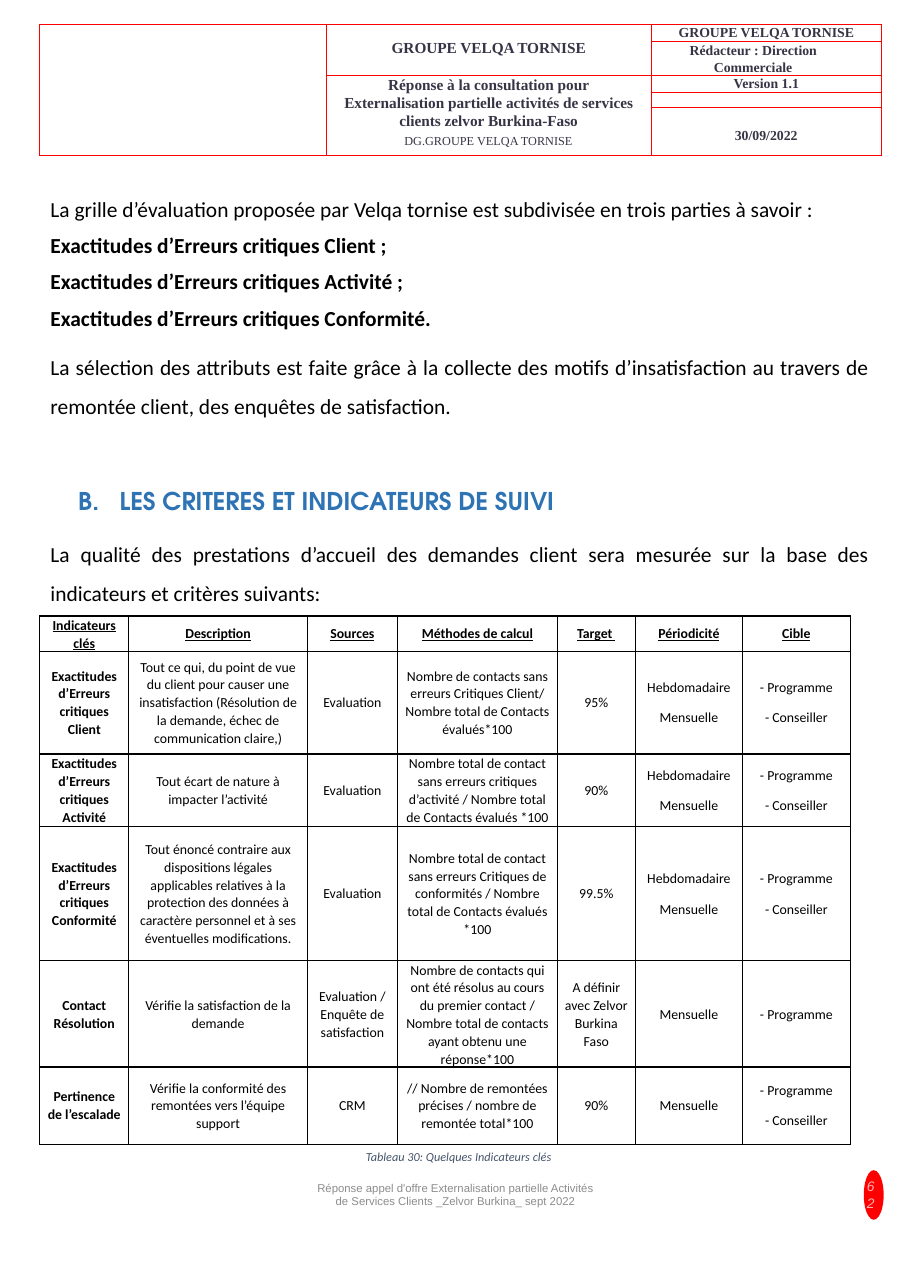
from dataclasses import dataclass
from lxml import etree
from pptx import Presentation
from pptx.dml.color import RGBColor
from pptx.enum.shapes import MSO_SHAPE
from pptx.enum.text import MSO_ANCHOR, MSO_AUTO_SIZE, PP_ALIGN
from pptx.oxml.ns import qn
from pptx.util import Pt

LEFT, MID, RIGHT, FULL = PP_ALIGN.LEFT, PP_ALIGN.CENTER, PP_ALIGN.RIGHT, PP_ALIGN.JUSTIFY
TOP, HALF = MSO_ANCHOR.TOP, MSO_ANCHOR.MIDDLE
OVAL, FIXED = MSO_SHAPE.OVAL, MSO_AUTO_SIZE.NONE


@dataclass(frozen=True)
class Theme:
    """Colours, faces and type sizes."""
    black: str = "000000"
    white: str = "FFFFFF"
    red: str = "FF0000"
    ink: str = "373545"
    blue: str = "2E74B5"
    slate: str = "44546A"
    gray: str = "8C8C8C"
    main: str = "Calibri"
    serif: str = "Times New Roman"
    sans: str = "Arial"
    display: str = "TeX Gyre Adventor"
    head: float = 16
    body: float = 14
    label: float = 10
    cell: float = 9
    minor: float = 8
    foot: float = 7.4


T = Theme()

GRID = [
    ["Indicateurs clés", "Description", "Sources", "Méthodes de calcul",
     "Target ", "Périodicité", "Cible"],
    ["Exactitudes d’Erreurs critiques Client",
     "Tout ce qui, du point de vue du client pour causer une insatisfaction "
     "(Résolution de la demande, échec de communication claire,)",
     "Evaluation",
     "Nombre de contacts sans erreurs Critiques Client/ Nombre total de Contacts évalués*100",
     "95%", "Hebdomadaire\nMensuelle", "- Programme\n- Conseiller"],
    ["Exactitudes d’Erreurs critiques Activité",
     "Tout écart de nature à impacter l’activité", "Evaluation",
     "Nombre total de contact sans erreurs critiques d’activité / "
     "Nombre total de Contacts évalués *100",
     "90%", "Hebdomadaire\nMensuelle", "- Programme\n- Conseiller"],
    ["Exactitudes d’Erreurs critiques Conformité",
     "Tout énoncé contraire aux dispositions légales applicables relatives à la protection "
     "des données à caractère personnel et à ses éventuelles modifications.",
     "Evaluation",
     "Nombre total de contact sans erreurs Critiques de conformités / "
     "Nombre total de Contacts évalués *100",
     "99.5%", "Hebdomadaire\nMensuelle", "- Programme\n- Conseiller"],
    ["Contact Résolution", "Vérifie la satisfaction de la demande",
     "Evaluation / Enquête de satisfaction",
     "Nombre de contacts qui ont été résolus au cours du premier contact / "
     "Nombre total de contacts ayant obtenu une réponse*100",
     "A définir avec Zelvor Burkina Faso", "Mensuelle", "- Programme"],
    ["Pertinence de l’escalade",
     "Vérifie la conformité des remontées vers l’équipe support", "CRM",
     "// Nombre de remontées précises / nombre de remontée total*100",
     "90%", "Mensuelle", "- Programme\n- Conseiller"],
]


def write(frame, text, size=T.body, face=T.main, color=T.black, bold=False, italic=False,
          under=False, align=MID, line=None, before=0, after=0):
    """Add each line of text as a paragraph and return the last one."""
    for part in text.split("\n"):
        first = frame.paragraphs[0]
        par = frame.add_paragraph() if first.runs else first
        par.alignment = align
        par.space_before, par.space_after = Pt(before), Pt(after)
        if line:
            par.line_spacing = line
        run = par.add_run()
        run.text = part
        font = run.font
        font.size, font.name = Pt(size), face
        font.bold, font.italic, font.underline = bold, italic, under
        font.color.rgb = RGBColor.from_string(color)
    return par


def hang(par, left, first):
    """Set a left margin and first-line indent, and return the properties."""
    props = par._p.get_or_add_pPr()
    props.set("marL", str(Pt(left)))
    props.set("indent", str(Pt(first)))
    return props


def add_box(slide, box, anchor=TOP):
    """Add a wrapping text box and return its frame."""
    frame = slide.shapes.add_textbox(*map(Pt, box)).text_frame
    frame.word_wrap = True
    frame.vertical_anchor = anchor
    return frame


def edge(cell, color, width):
    """Draw the four borders of a cell."""
    props = cell._tc.get_or_add_tcPr()
    for side in ("lnL", "lnR", "lnT", "lnB"):
        rule = etree.SubElement(props, qn("a:" + side), w=str(Pt(width)))
        fill = etree.SubElement(rule, qn("a:solidFill"))
        etree.SubElement(fill, qn("a:srgbClr"), val=color)


def add_grid(slide, left, top, cols, rows, color, width, pad=0):
    """Add a plain ruled table and return it."""
    box = (left, top, sum(cols), sum(rows))
    table = slide.shapes.add_table(len(rows), len(cols), *map(Pt, box)).table
    table.first_row = table.horz_banding = False
    for col, size in zip(table.columns, cols):
        col.width = Pt(size)
    for row, size in zip(table.rows, rows):
        row.height = Pt(size)
    for cell in table.iter_cells():
        edge(cell, color, width)
        cell.fill.background()
        cell.margin_left = cell.margin_right = Pt(pad)
        cell.margin_top = cell.margin_bottom = 0
    return table


def add_header(slide, left, top):
    """Place the document header table."""
    table = add_grid(slide, left, top, [187.2, 212.4, 150.48],
                     [10.8, 22.6, 11, 9.8, 31.4], T.red, 0.25)
    for start, end in [((0, 0), (4, 0)), ((0, 1), (1, 1)), ((2, 1), (4, 1))]:
        table.cell(*start).merge(table.cell(*end))
    labels = [
        (0, 1, "GROUPE VELQA TORNISE", T.label, None, 10.5),
        (0, 2, "GROUPE VELQA TORNISE", T.cell, 10.7, 0),
        (1, 2, "Rédacteur : Direction Commerciale", T.cell, 11.3, 0),
        (2, 1, "Réponse à la consultation pour\nExternalisation partielle activités "
               "de services clients zelvor Burkina-Faso", T.label, 11.9, 0),
        (2, 2, "Version 1.1", T.cell, 10.8, 0),
        (4, 2, "30/09/2022", T.cell, None, 14),
    ]
    for row, col, text, size, line, drop in labels:
        cell = table.cell(row, col)
        cell.margin_top = Pt(drop)
        write(cell.text_frame, text, size=size, face=T.serif, color=T.ink, bold=True,
              line=line and Pt(line))
    note = table.cell(1, 2).text_frame.paragraphs[0]
    note.alignment = LEFT
    hang(note, 41, -15.8)
    write(table.cell(2, 1).text_frame, "DG.GROUPE VELQA TORNISE", size=T.minor,
          face=T.serif, color=T.ink, before=2.6)
    for cell in table.iter_cells():
        if not cell.text_frame.text:
            par = cell.text_frame.paragraphs[0]
            etree.SubElement(par._p, qn("a:endParaRPr"), sz="600")


def add_body(slide, box):
    """Place the running text around the heading."""
    frame = add_box(slide, box)
    style = dict(align=FULL, after=7)
    write(frame, "La grille d’évaluation proposée par Velqa tornise est subdivisée en "
                 "trois parties à savoir :", line=1.5, **style)
    write(frame, "Exactitudes d’Erreurs critiques Client ;\n"
                 "Exactitudes d’Erreurs critiques Activité ;\n"
                 "Exactitudes d’Erreurs critiques Conformité.", bold=True, **style)
    write(frame, "La sélection des attributs est faite grâce à la collecte des motifs "
                 "d’insatisfaction au travers de remontée client, des enquêtes de "
                 "satisfaction.", line=1.5, **style)
    write(frame, "La qualité des prestations d’accueil des demandes client sera mesurée "
                 "sur la base des indicateurs et critères suivants:",
          line=1.5, before=65, **style)


def add_title(slide, box):
    """Place the lettered section heading."""
    title = slide.shapes.title
    title.left, title.top, title.width, title.height = map(Pt, box)
    frame = title.text_frame
    frame.word_wrap, frame.auto_size, frame.vertical_anchor = True, FIXED, TOP
    par = write(frame, "LES CRITERES ET INDICATEURS DE SUIVI", size=T.head,
                face=T.display, color=T.blue, bold=True, align=LEFT, line=1.07)
    props = hang(par, 27, -27)
    etree.SubElement(props, qn("a:buFont"), typeface=T.display)
    etree.SubElement(props, qn("a:buAutoNum"), type="alphaUcPeriod", startAt="2")


def add_scores(slide, left, top):
    """Place the indicator table and its caption."""
    cols = [58.3, 116.6, 59, 104.4, 51.1, 69.9, 70.6]
    rows = [23, 67, 47.5, 87.8, 69.1, 50.4]
    table = add_grid(slide, left, top, cols, rows, T.black, 1, 4.3)
    for r, row in enumerate(GRID):
        for c, text in enumerate(row):
            cell = table.cell(r, c)
            cell.vertical_anchor = HALF
            write(cell.text_frame, text, size=T.cell, bold=r == 0 or c == 0,
                  under=r == 0, line=1.07, after=8)
    frame = add_box(slide, (left + 154.8, top + sum(rows), 238.3, 16.6))
    write(frame, "Tableau 30: Quelques Indicateurs clés", size=T.minor,
          color=T.slate, italic=True)


def add_footer(slide, left, top, high):
    """Place the footer line and the page badge."""
    frame = add_box(slide, (left, top, 200.9, high), HALF)
    write(frame, "Réponse appel d'offre Externalisation partielle Activités de Services "
                 "Clients _Zelvor Burkina_ sept 2022", size=T.foot, face=T.sans, color=T.gray)
    badge = slide.shapes.add_shape(OVAL, *map(Pt, (left + 367.2, top + 6.5, 13, 32.4)))
    badge.shadow.inherit = False
    badge.fill.solid()
    badge.fill.fore_color.rgb = RGBColor.from_string(T.red)
    badge.line.fill.background()
    frame = add_box(slide, (left + 362.2, top, 17.3, high), HALF)
    par = write(frame, "62", size=T.cell, face=T.sans, color=T.white, italic=True, align=RIGHT)
    tint = next(par._p.iter(qn("a:srgbClr")))
    etree.SubElement(tint, qn("a:alpha"), val="70000")


def main():
    """Build the page and save it."""
    deck = Presentation()
    deck.slide_width, deck.slide_height = Pt(594.72), Pt(841.68)
    slide = deck.slides.add_slide(deck.slide_layouts[5])
    add_header(slide, 25.9, 15.8)
    add_body(slide, (25.9, 115.9, 549.4, 283))
    add_title(slide, (43.9, 312.5, 375.8, 26.6))
    add_scores(slide, 25.9, 402.5)
    add_footer(slide, 197.3, 758.2, 44.6)
    deck.save("out.pptx")


if __name__ == "__main__":
    main()
